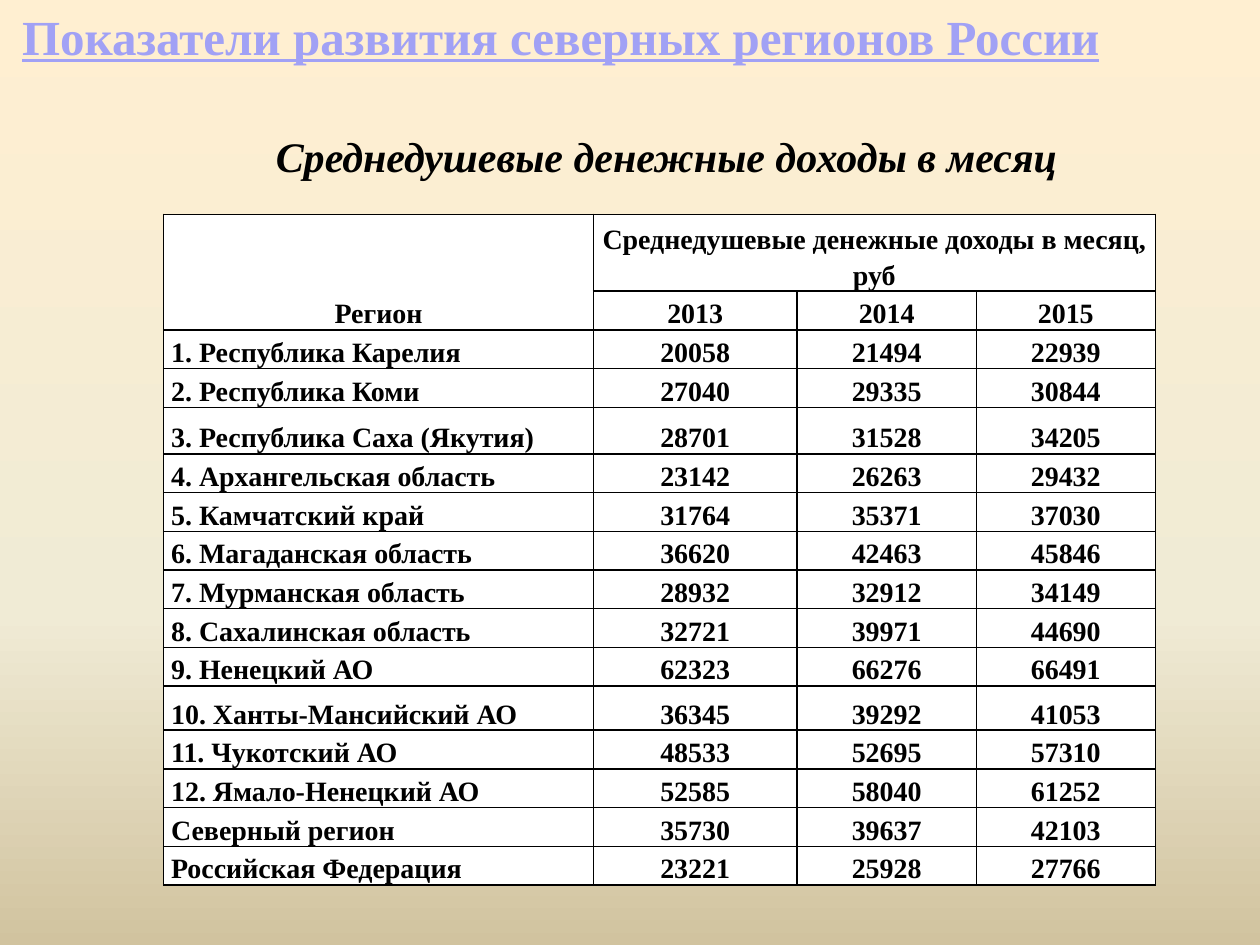
import copy

import lxml.etree
import pptx
import pptx.dml.color
import pptx.enum.text
import pptx.oxml.ns
import pptx.util

Cm, Pt, qn = pptx.util.Cm, pptx.util.Pt, pptx.oxml.ns.qn
CENTER = pptx.enum.text.PP_ALIGN.CENTER
LEFT = pptx.enum.text.PP_ALIGN.LEFT
FONT = "Times New Roman"


def rgb(value):
    return pptx.dml.color.RGBColor.from_string(value)


def set_gradient(fill, element, stops):
    """Top-to-bottom gradient with three (position, colour) stops."""
    fill.gradient()
    fill.gradient_angle = 270
    gs_list = element.find(".//" + qn("a:gsLst"))
    gs_list.append(copy.deepcopy(gs_list[0]))
    for stop, (position, colour) in zip(fill.gradient_stops, stops):
        stop.position = position
        stop.color.rgb = rgb(colour)


prs = pptx.Presentation()
prs.slide_width, prs.slide_height = Cm(25.4), Cm(19.05)
s = prs.slides.add_slide(prs.slide_layouts[6])

# Background
set_gradient(s.background.fill, s.element,
             [(0, "FFEFD1"), (0.65, "F0EBD5"), (1, "D1C39F")])

# Table data
years = ["2013", "2014", "2015"]
regions = [
    ("1. Республика Карелия", 20058, 21494, 22939),
    ("2. Республика Коми", 27040, 29335, 30844),
    ("3. Республика Саха (Якутия)", 28701, 31528, 34205),
    ("4. Архангельская область", 23142, 26263, 29432),
    ("5. Камчатский край", 31764, 35371, 37030),
    ("6. Магаданская область", 36620, 42463, 45846),
    ("7. Мурманская область", 28932, 32912, 34149),
    ("8. Сахалинская область", 32721, 39971, 44690),
    ("9. Ненецкий АО", 62323, 66276, 66491),
    ("10. Ханты-Мансийский АО", 36345, 39292, 41053),
    ("11. Чукотский АО", 48533, 52695, 57310),
    ("12. Ямало-Ненецкий АО", 52585, 58040, 61252),
    ("Северный регион", 35730, 39637, 42103),
    ("Российская Федерация", 23221, 25928, 27766),
]
rows = [("Регион", "Среднедушевые денежные доходы в месяц, руб", "", ""),
        ("", *years), *regions]
col_widths = [8.66, 4.11, 3.61, 3.61]
row_heights = [0.78] * len(rows)
row_heights[0], row_heights[4], row_heights[11] = 1.55, 0.94, 0.89

# Table grid
sp = s.shapes.add_table(len(rows), len(col_widths), Cm(3.3), Cm(4.32),
                        Cm(sum(col_widths)), Cm(sum(row_heights)))
table = sp.table
table.first_row = table.horz_banding = False
for column, width in zip(table.columns, col_widths):
    column.width = Cm(width)
for row, height in zip(table.rows, row_heights):
    row.height = Cm(height)
table.cell(0, 0).merge(table.cell(1, 0))
table.cell(0, 1).merge(table.cell(0, 3))

# Table cells
cell_format = {
    "margin_left": Cm(0.15), "margin_right": Cm(0.15),
    "margin_top": 0, "margin_bottom": 0,
    "vertical_anchor": pptx.enum.text.MSO_ANCHOR.BOTTOM,
}
cell_font = {"name": FONT, "size": Pt(16), "bold": True}
for i, values in enumerate(rows):
    for j, value in enumerate(values):
        cell = table.cell(i, j)
        for name, setting in cell_format.items():
            setattr(cell, name, setting)
        tc_pr = cell._tc.get_or_add_tcPr()
        for side in ("a:lnL", "a:lnR", "a:lnT", "a:lnB"):
            ln = lxml.etree.SubElement(tc_pr, qn(side), w=str(Pt(1)))
            solid = lxml.etree.SubElement(ln, qn("a:solidFill"))
            lxml.etree.SubElement(solid, qn("a:srgbClr"), val="000000")
        cell.fill.solid()
        cell.fill.fore_color.rgb = rgb("FFFFFF")
        if value == "":
            continue
        p = cell.text_frame.paragraphs[0]
        p.alignment = LEFT if j == 0 and i > 1 else CENTER
        p.line_spacing = 1.15
        r = p.add_run()
        r.text = str(value)
        for name, setting in cell_font.items():
            setattr(r.font, name, setting)
        r.font.color.rgb = rgb("000000")

# Title and subtitle
headings = [
    ("Показатели развития северных регионов России",
     (0.08, 0, 22.45, 1.45), CENTER,
     {"name": FONT, "size": Pt(28), "bold": True, "underline": True}),
    ("Среднедушевые денежные доходы в месяц",
     (5.31, 2.51, 16.41, 1.27), LEFT,
     {"name": FONT, "size": Pt(24), "bold": True, "italic": True}),
]
for text, box, alignment, font in headings:
    sp = s.shapes.add_textbox(*map(Cm, box))
    tf = sp.text_frame
    tf.word_wrap = False
    tf.auto_size = pptx.enum.text.MSO_AUTO_SIZE.SHAPE_TO_FIT_TEXT
    p = tf.paragraphs[0]
    p.alignment = alignment
    r = p.add_run()
    r.text = text
    for name, setting in font.items():
        setattr(r.font, name, setting)
    if "underline" in font:
        set_gradient(r.font.fill, sp.element,
                     [(0, "50507E"), (0.78, "A1A1F5"), (1, "F5F5FF")])
    else:
        r.font.color.rgb = rgb("000000")

prs.save("out.pptx")
